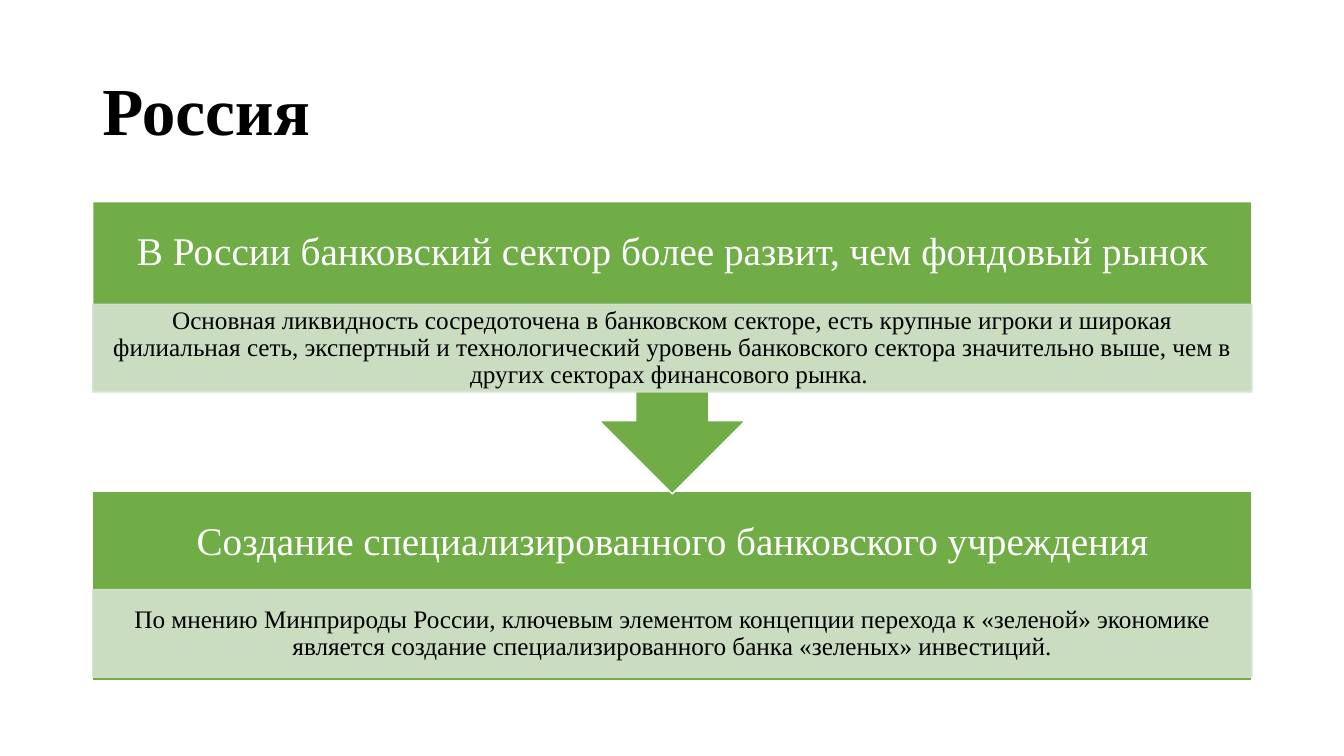
from pptx import Presentation
from pptx.dml.color import RGBColor
from pptx.enum.shapes import MSO_SHAPE
from pptx.enum.text import MSO_ANCHOR, PP_ALIGN
from pptx.oxml.ns import qn
from pptx.util import Pt
from lxml import etree

RECTANGLE = MSO_SHAPE.RECTANGLE
ARROW_CALLOUT = MSO_SHAPE.DOWN_ARROW_CALLOUT
MIDDLE = MSO_ANCHOR.MIDDLE
LEFT, CENTER = PP_ALIGN.LEFT, PP_ALIGN.CENTER

FONT = "Times New Roman"
GREEN, PALE, WHITE, BLACK = "70AD47", "D5E3CF", "FFFFFF", "000000"
BLOCK_LEFT, BLOCK_WIDTH = 66.24, 828
HEADING_HEIGHT, DETAIL_HEIGHT = 73.44, 62.64

# Shape, top, height, top of the detail band, heading, detail
BLOCKS = [
    (RECTANGLE, 350.64, 135.36, 421.2,
     "Создание специализированного банковского учреждения",
     "По мнению Минприроды России, ключевым элементом концепции перехода "
     "к «зеленой» экономике является создание специализированного банка "
     "«зеленых» инвестиций."),
    (ARROW_CALLOUT, 144, 208.8, 217.44,
     "В России банковский сектор более развит, чем фондовый рынок",
     "Основная ликвидность сосредоточена в банковском секторе, есть крупные "
     "игроки и широкая филиальная сеть, экспертный и технологический уровень "
     "банковского сектора значительно выше, чем в других секторах "
     "финансового рынка. "),
]


def color(hex_value):
    return RGBColor.from_string(hex_value)


def write(shape, text, size, hex_color, bold=False, align=CENTER, inset=(7.2, 3.6)):
    """Fill a shape with one formatted paragraph."""
    frame = shape.text_frame
    frame.word_wrap = True
    frame.vertical_anchor = MIDDLE
    frame.margin_left = frame.margin_right = Pt(inset[0])
    frame.margin_top = frame.margin_bottom = Pt(inset[1])
    para = frame.paragraphs[0]
    para.alignment = align
    para.line_spacing = 0.9
    span = para.add_run()
    span.text = text
    span.font.name = FONT
    span.font.size = Pt(size)
    span.font.bold = bold
    span.font.color.rgb = color(hex_color)


def add_title(page, text):
    title = page.shapes.title
    title.left, title.top = Pt(66), Pt(28.75)
    title.width, title.height = Pt(828), Pt(104.4)
    write(title, text, 48, BLACK, bold=True, align=LEFT)


def add_box(page, kind, top, height, fill, line, opacity=100):
    box = page.shapes.add_shape(
        kind, Pt(BLOCK_LEFT), Pt(top), Pt(BLOCK_WIDTH), Pt(height))
    box.shadow.inherit = False
    box.fill.solid()
    box.fill.fore_color.rgb = color(fill)
    box.line.color.rgb = color(line)
    box.line.width = Pt(1)
    if opacity < 100:
        # Transparency of both fill and outline
        for tone in box._element.spPr.iter(qn("a:srgbClr")):
            etree.SubElement(tone, qn("a:alpha"), val=str(opacity * 1000))
    return box


def add_block(page, kind, top, height, detail_top, heading, detail):
    """Draw a green block with a heading and a pale band of detail."""
    add_box(page, kind, top, height, GREEN, WHITE)
    label = page.shapes.add_textbox(
        Pt(BLOCK_LEFT), Pt(top), Pt(BLOCK_WIDTH), Pt(HEADING_HEIGHT))
    write(label, heading, 28, WHITE, inset=(15.84, 15.84))
    band = add_box(page, RECTANGLE, detail_top, DETAIL_HEIGHT, PALE, PALE, opacity=90)
    write(band, detail, 18, BLACK, inset=(10.08, 2.16))


def main():
    deck = Presentation()
    deck.slide_width, deck.slide_height = Pt(960), Pt(540)
    page = deck.slides.add_slide(deck.slide_layouts[5])
    add_title(page, "Россия")
    for block in BLOCKS:
        add_block(page, *block)
    deck.save("out.pptx")


if __name__ == "__main__":
    main()
